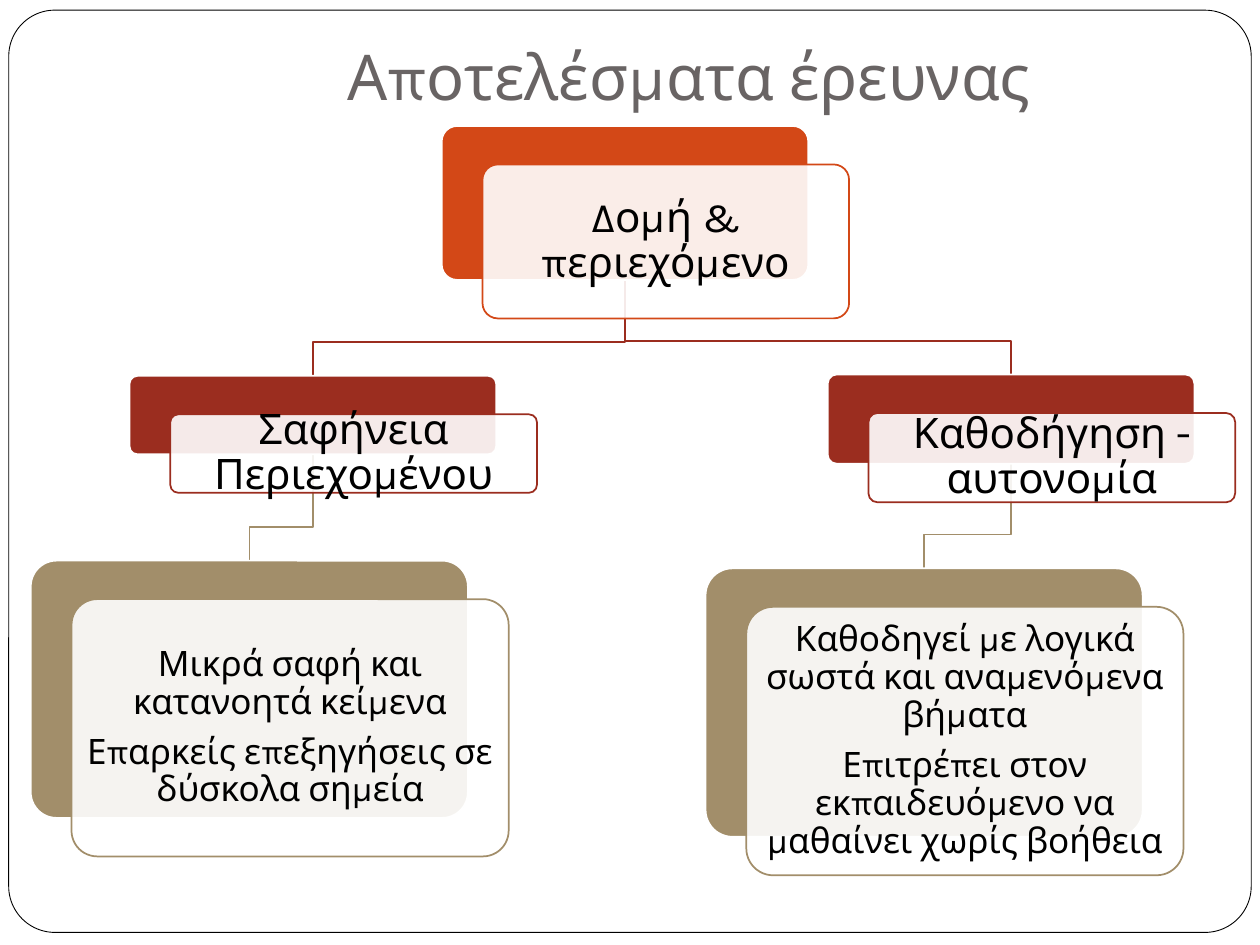
from lxml import etree
from pptx import Presentation
from pptx.dml.color import RGBColor
from pptx.enum import shapes, text
from pptx.oxml import ns
from pptx.util import Pt

FONT = "Karla"
WHITE = RGBColor(0xFF, 0xFF, 0xFF)
BLACK = RGBColor(0, 0, 0)
GREY = RGBColor(0x69, 0x64, 0x64)
ORANGE = RGBColor(0xD3, 0x48, 0x17)
RED = RGBColor(0x9B, 0x2D, 0x1F)
TAN = RGBColor(0xA2, 0x8E, 0x6A)

SHIFT_X, SHIFT_Y = 23.3, 22  # front panel against back panel
BEND = 19.3  # height of a link's turn above the child

prs = Presentation()
prs.slide_width, prs.slide_height = Pt(720), Pt(540)
slide = prs.slides.add_slide(prs.slide_layouts[5])


def add_panel(x, y, w, h, fill, line, width=1, round=0.1):
    panel = slide.shapes.add_shape(
        shapes.MSO_SHAPE.ROUNDED_RECTANGLE, Pt(x), Pt(y), Pt(w), Pt(h))
    panel.adjustments[0] = round
    panel.shadow.inherit = False
    panel.fill.solid()
    panel.fill.fore_color.rgb = fill
    panel.line.color.rgb = line
    panel.line.width = Pt(width)
    return panel


def add_run(para, words, size, color):
    para.alignment = text.PP_ALIGN.CENTER
    run = para.add_run()
    run.text = words
    run.font.name = FONT
    run.font.size = Pt(size)
    run.font.color.rgb = color


# Frame, then title in front of it
title = slide.shapes.title
add_panel(5, 5.8, 710, 527, WHITE, BLACK, 0.5, 0.05)
slide.shapes._spTree.append(title._element)
title.left, title.top, title.width, title.height = Pt(87.8), Pt(15.1), Pt(612), Pt(56.9)
frame = title.text_frame
frame.auto_size = text.MSO_AUTO_SIZE.NONE
frame.vertical_anchor = text.MSO_ANCHOR.BOTTOM
frame.margin_bottom = Pt(7.2)
add_run(frame.paragraphs[0], "Αποτελέσματα έρευνας", 36, GREY)

# name: (left, top, width, height, colour, text size, inset, paragraphs)
cards = {
    "root": (252.4, 72, 209.5, 88, ORANGE, 24, 7.2, ["Δομή & περιεχόμενο"]),
    "clear": (74, 214.8, 209.5, 44.8, RED, 24, 7.2, ["Σαφήνεια Περιεχομένου"]),
    "texts": (17.6, 320.4, 249.8, 147, TAN, 20, 5.8,
              ["Μικρά σαφή και κατανοητά κείμενα",
               "Επαρκείς επεξηγήσεις σε δύσκολα σημεία"]),
    "guide": (473, 214, 209.5, 51, RED, 24, 7.2, ["Καθοδήγηση - αυτονομία"]),
    "steps": (403.2, 324.8, 249.8, 153.4, TAN, 20, 5.8,
              ["Καθοδηγεί με λογικά σωστά και αναμενόμενα βήματα",
               "Επιτρέπει στον εκπαιδευόμενο να μαθαίνει χωρίς βοήθεια"]),
}
links = [("guide", "steps"), ("root", "guide"), ("clear", "texts"), ("root", "clear")]

for parent, child in links:
    px, py, pw, ph = cards[parent][:4]
    cx, cy, cw, _, color = cards[child][:5]
    start, end, turn = px + pw / 2, cx + cw / 2, cy - BEND
    path = slide.shapes.build_freeform(Pt(start), Pt(py + ph))
    path.add_line_segments(
        [(Pt(start), Pt(turn)), (Pt(end), Pt(turn)), (Pt(end), Pt(cy))], close=False)
    link = path.convert_to_shape()
    link.shadow.inherit = False
    link.fill.background()
    link.line.color.rgb = color
    link.line.width = Pt(1)

for x, y, w, h, color, size, inset, lines in cards.values():
    add_panel(x, y, w, h, color, WHITE)
    front = add_panel(x + SHIFT_X, y + SHIFT_Y, w, h, WHITE, color)
    tint = front._element.spPr.find(ns.qn("a:solidFill"))[0]
    etree.SubElement(tint, ns.qn("a:alpha"), val="90000")
    frame = front.text_frame
    frame.word_wrap = True
    frame.vertical_anchor = text.MSO_ANCHOR.MIDDLE
    # The rounded corners already push the text in by about 3% of the height
    pad = Pt(inset - 0.03 * h)
    frame.margin_left = frame.margin_right = pad
    frame.margin_top = frame.margin_bottom = pad
    for i, words in enumerate(lines):
        para = frame.add_paragraph() if i else frame.paragraphs[0]
        para.line_spacing = 0.9
        para.space_after = Pt(0.35 * size)
        add_run(para, words, size, BLACK)

prs.save("out.pptx")
